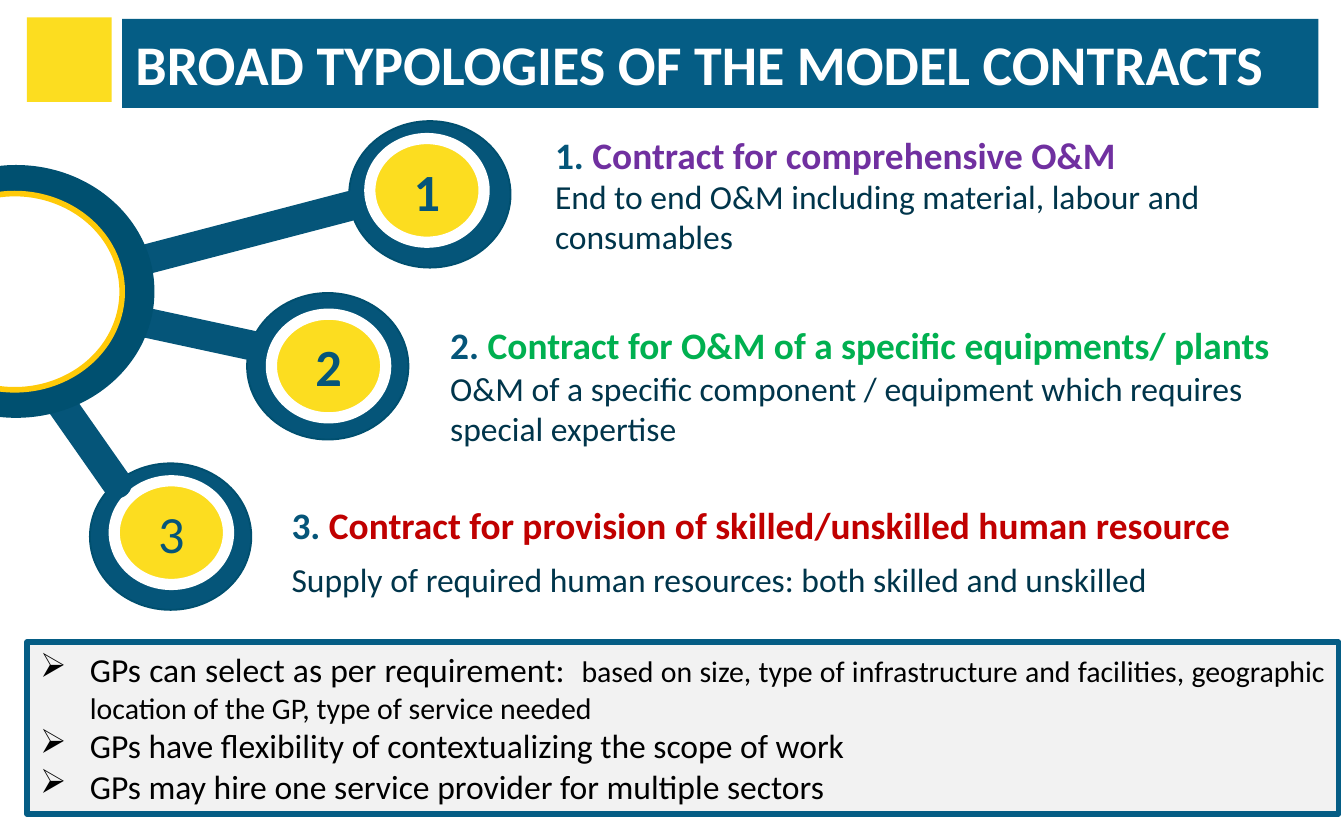
from lxml import etree
from pptx import Presentation
from pptx.dml.color import RGBColor
from pptx.enum.shapes import MSO_CONNECTOR, MSO_SHAPE
from pptx.enum.text import MSO_ANCHOR, PP_ALIGN
from pptx.oxml.ns import qn
from pptx.util import Cm, Pt

RECTANGLE, OVAL = MSO_SHAPE.RECTANGLE, MSO_SHAPE.OVAL
STRAIGHT = MSO_CONNECTOR.STRAIGHT
TOP, MIDDLE = MSO_ANCHOR.TOP, MSO_ANCHOR.MIDDLE
LEFT, CENTER, JUSTIFY = PP_ALIGN.LEFT, PP_ALIGN.CENTER, PP_ALIGN.JUSTIFY

RING_SIZE = (3.05, 2.77)
DISC_SIZE = (2.16, 1.96)


def color(value):
    return RGBColor.from_string(value)


class SlideBuilder:
    font = "Calibri"
    blue, title_blue, dark_blue, hub_blue = "055579", "055D85", "004F6F", "005070"
    yellow, gold, white, gray = "FCDD20", "FFCA09", "FFFFFF", "F2F2F2"
    body, black = "00354B", "000000"

    def __init__(self, slide):
        self.slide = slide

    def shape(self, kind, box, fill, line=None, width=1):
        shape = self.slide.shapes.add_shape(kind, *map(Cm, box))
        shape.shadow.inherit = False
        shape.fill.solid()
        shape.fill.fore_color.rgb = color(fill)
        if line:
            shape.line.color.rgb = color(line)
            shape.line.width = Pt(width)
        else:
            shape.line.fill.background()
        return shape

    def frame(self, shape, anchor=MIDDLE, margins=(0.25, 0.13)):
        frame = shape.text_frame
        frame.word_wrap = True
        frame.vertical_anchor = anchor
        frame.margin_left = frame.margin_right = Cm(margins[0])
        frame.margin_top = frame.margin_bottom = Cm(margins[1])
        return frame

    def add_runs(self, paragraph, runs, align=LEFT, spacing=None):
        """Each run is (text, size, color, bold)."""
        paragraph.alignment = align
        if spacing:
            paragraph.line_spacing = spacing
        for text, size, text_color, bold in runs:
            run = paragraph.add_run()
            run.text = text
            run.font.name = self.font
            run.font.size = Pt(size)
            run.font.bold = bold
            run.font.color.rgb = color(text_color)

    def text(self, box, runs, spacing=None):
        textbox = self.slide.shapes.add_textbox(*map(Cm, box))
        frame = self.frame(textbox, margins=(0, 0))
        self.add_runs(frame.paragraphs[0], runs, spacing=spacing)

    def spoke(self, start, end):
        connector = self.slide.shapes.add_connector(STRAIGHT, *map(Cm, start + end))
        connector.line.color.rgb = color(self.blue)
        connector.line.width = Pt(16)
        properties = connector._element.spPr
        properties.find(qn("a:ln")).set("cap", "rnd")
        etree.SubElement(properties, qn("a:effectLst"))

    def number(self, label, ring, disc, bold):
        self.shape(OVAL, ring + RING_SIZE, self.blue, self.dark_blue)
        shape = self.shape(OVAL, disc + DISC_SIZE, self.yellow, self.white, 6)
        frame = self.frame(shape, margins=(0.2, 0.1))
        self.add_runs(frame.paragraphs[0], [(label, 28, self.blue, bold)], CENTER)

    def bullets(self, frame, items):
        for index, (runs, align) in enumerate(items):
            paragraph = frame.add_paragraph() if index else frame.paragraphs[0]
            self.add_runs(paragraph, runs, align)
            properties = paragraph._p.get_or_add_pPr()
            properties.set("marL", str(Cm(0.94)))
            properties.set("indent", str(-Cm(0.94)))
            etree.SubElement(properties, qn("a:buChar")).set("char", "➢")


def main():
    presentation = Presentation()
    presentation.slide_width, presentation.slide_height = Cm(25.4), Cm(15.88)
    builder = SlideBuilder(presentation.slides.add_slide(presentation.slide_layouts[6]))

    # Contract types: heading, description, numbered circle
    contracts = [
        ("1", "Contract for comprehensive O&M", "7030A0", (10.49, 2.64, 11.18, 0.69),
         "End to end O&M including material, labour and consumables",
         (10.49, 3.3, 13.41, 1.57), (6.6, 2.29), (6.99, 2.62), True),
        ("2", "Contract for O&M of a specific equipments/ plants", "00B050",
         (8.51, 5.99, 15.6, 1.14),
         "O&M of a specific component / equipment which requires special expertise",
         (8.51, 7.06, 15.39, 1.3), (4.67, 5.54), (5.13, 5.94), True),
        ("3", "Contract for provision of skilled/unskilled human resource", "C00000",
         (5.51, 9.4, 17.96, 1.14),
         "Supply of required human resources: both skilled and unskilled",
         (5.51, 10.31, 17.96, 1.27), (1.7, 8.76), (2.16, 9.09), False),
    ]
    for label, heading, accent, heading_box, detail, detail_box, ring, disc, bold in contracts:
        builder.text(heading_box, [(f"{label}. ", 20, builder.blue, True),
                                   (heading, 20, accent, True)], spacing=0.9)
        builder.text(detail_box, [(detail, 18, builder.body, False)])
        builder.number(label, ring, disc, bold)

    # Spokes and hub
    for start, end in [((6.63, 3.89), (2.77, 4.9)),
                       ((4.75, 6.53), (2.62, 6.07)),
                       ((2.21, 9.14), (0.97, 7.37))]:
        builder.spoke(start, end)
    builder.shape(OVAL, (-2.31, 3.12, 5.23, 4.78), builder.hub_blue)
    builder.shape(OVAL, (-1.75, 3.66, 4.06, 3.71), builder.white, builder.gold, 3)

    # Notes for GPs
    panel = builder.shape(RECTANGLE, (0.51, 12.14, 24.79, 3.25),
                          builder.gray, builder.title_blue, 3)
    black = builder.black
    builder.bullets(builder.frame(panel, TOP), [
        ([("GPs can select as per requirement:  ", 18, black, False),
          ("based on size, type of infrastructure and facilities, geographic "
           "location of the GP, type of service needed", 16, black, False)], JUSTIFY),
        ([("GPs have flexibility of contextualizing the scope of work",
           18, black, False)], LEFT),
        ([("GPs may hire one service provider for multiple sectors",
           18, black, False)], LEFT),
    ])

    # Title bar
    title = builder.shape(RECTANGLE, (2.31, 0.36, 22.61, 1.68), builder.title_blue)
    builder.add_runs(builder.frame(title).paragraphs[0],
                     [("BROAD TYPOLOGIES OF THE MODEL CONTRACTS", 30, builder.white, True)])
    builder.shape(RECTANGLE, (0.51, 0.33, 1.6, 1.6), builder.yellow)

    presentation.save("out.pptx")


if __name__ == "__main__":
    main()
